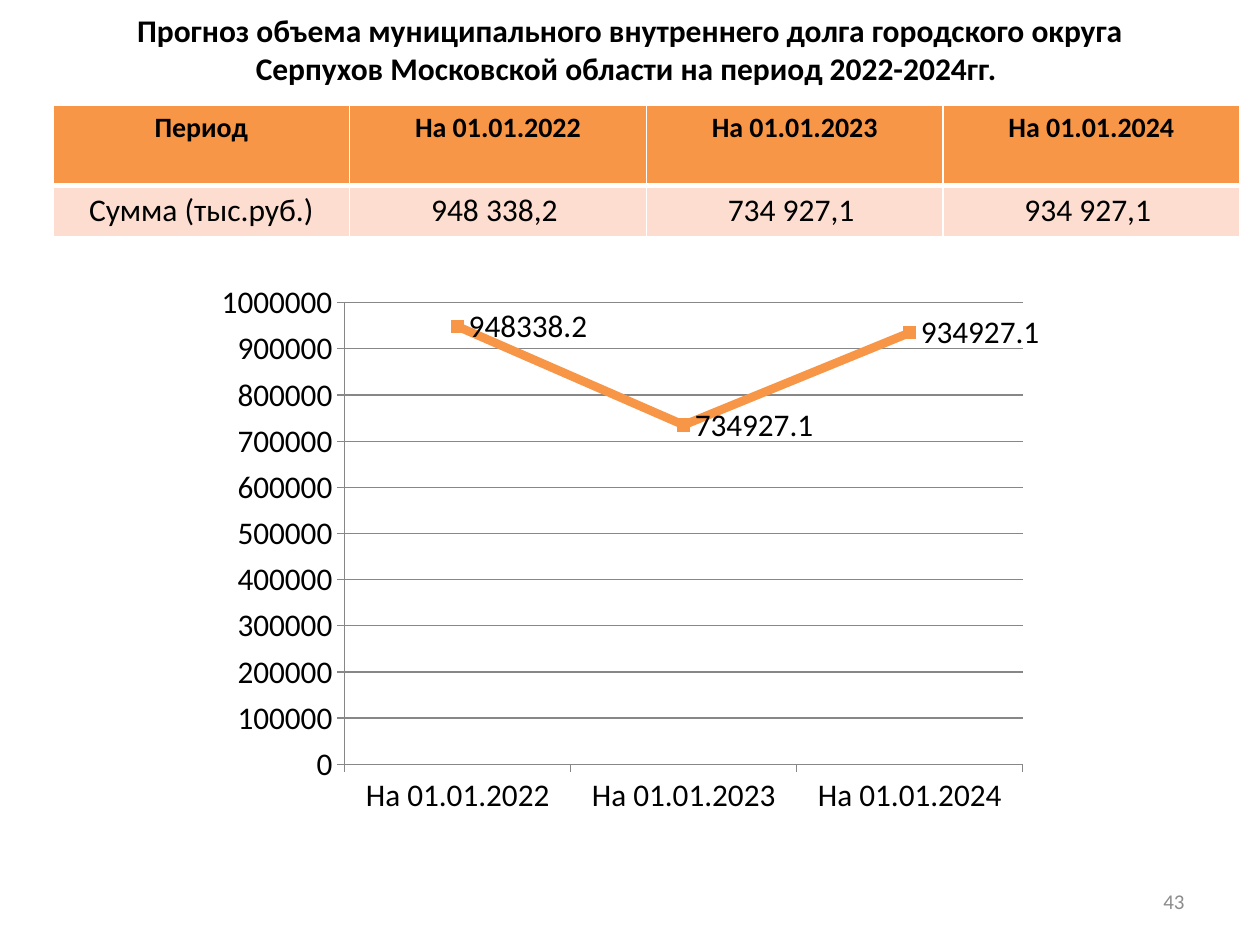
from lxml.etree import SubElement
from pptx import Presentation
from pptx.chart.data import CategoryChartData
from pptx.dml.color import RGBColor
from pptx.enum.chart import XL_CHART_TYPE as ChartType, XL_LABEL_POSITION as LabelPosition
from pptx.enum.chart import XL_MARKER_STYLE as MarkerStyle, XL_TICK_MARK as TickMark
from pptx.enum.text import MSO_ANCHOR as Anchor, MSO_AUTO_SIZE as AutoSize, PP_ALIGN as Align
from pptx.oxml import parse_xml
from pptx.oxml.ns import nsdecls, qn
from pptx.util import Inches, Pt

WIDTH, HEIGHT = Inches(10), Inches(7.5)
FONT = "Calibri"
COLORS = {
    "text": "000000",
    "number": "8C8C8C",
    "accent": "F79646",
    "pale": "FCDDCF",
    "border": "FFFFFF",
    "axis": "878787",
}
DATES = ["На 01.01.2022", "На 01.01.2023", "На 01.01.2024"]
DEBT = [948338.2, 734927.1, 934927.1]


def color(name):
    return RGBColor.from_string(COLORS[name])


def share(left, top, width, height):
    return int(WIDTH * left), int(HEIGHT * top), int(WIDTH * width), int(HEIGHT * height)


def style_font(font, size, name="text", bold=False):
    font.name, font.size, font.bold = FONT, Pt(size), bold
    font.color.rgb = color(name)


def write(frame, text, size, align, name="text", bold=False):
    para = frame.paragraphs[0]
    para.alignment = align
    span = para.add_run()
    span.text = text
    style_font(span.font, size, name, bold)


def add_title(page, text):
    title = page.shapes.title
    title.left, title.top, title.width, title.height = share(0.05, 0.01, 0.9, 0.083)
    frame = title.text_frame
    frame.auto_size = AutoSize.NONE
    frame.vertical_anchor = Anchor.MIDDLE
    write(frame, text, 18, Align.CENTER, bold=True)


def add_page_number(page, text):
    box = page.shapes.add_textbox(*share(0.717, 0.927, 0.233, 0.053))
    frame = box.text_frame
    frame.word_wrap = True
    frame.vertical_anchor = Anchor.MIDDLE
    write(frame, text, 12, Align.RIGHT, "number")


def set_borders(cell, widths):
    properties = cell._tc.get_or_add_tcPr()
    for side, width in widths.items():
        line = SubElement(properties, qn(f"a:ln{side}"), w=str(Pt(width)))
        fill = SubElement(line, qn("a:solidFill"))
        SubElement(fill, qn("a:srgbClr"), val=COLORS["border"])


def add_debt_table(page):
    amounts = [f"{value:,.1f} ".replace(",", "\u00a0").replace(".", ",") for value in DEBT]
    rows = [["Период", *DATES], ["Сумма (тыс.руб.)", *amounts]]
    styles = [("accent", 16, True, {"L": 1, "R": 1, "T": 1, "B": 3}),
              ("pale", 18, False, {"L": 1, "R": 1, "T": 3, "B": 1})]
    area = share(0.042, 0.111, 0.942, 0.139)
    table = page.shapes.add_table(len(rows), len(rows[0]), *area).table
    for row, height in zip(table.rows, (0.64, 0.4)):
        row.height = Inches(height)
    for row, texts, (fill, size, bold, borders) in zip(table.rows, rows, styles):
        for cell, text in zip(row.cells, texts):
            set_borders(cell, borders)
            cell.fill.solid()
            cell.fill.fore_color.rgb = color(fill)
            write(cell.text_frame, text, size, Align.CENTER, bold=bold)


def set_plot_area(chart, **places):
    plot_area = chart._chartSpace.chart.plotArea
    for old in plot_area.findall(qn("c:layout")):
        plot_area.remove(old)
    values = "".join(f'<c:{key} val="{value}"/>' for key, value in places.items())
    plot_area.insert(0, parse_xml(
        f'<c:layout {nsdecls("c")}><c:manualLayout><c:layoutTarget val="inner"/>'
        f'<c:xMode val="edge"/><c:yMode val="edge"/>{values}</c:manualLayout></c:layout>'))


def style_axis(axis, grid):
    axis.major_tick_mark, axis.minor_tick_mark = TickMark.OUTSIDE, TickMark.NONE
    axis.has_major_gridlines = grid
    lines = [axis.format.line]
    if grid:
        lines.append(axis.major_gridlines.format.line)
    for line in lines:
        line.color.rgb = color("axis")
        line.width = Pt(0.75)


def add_debt_chart(page):
    data = CategoryChartData(number_format="General")
    data.categories = DATES
    data.add_series("Series 1", DEBT)
    area = share(0.158, 0.289, 0.667, 0.592)
    chart = page.shapes.add_chart(ChartType.LINE_MARKERS, *area, data).chart
    chart.has_legend = chart.has_title = False
    style_font(chart.font, 18)
    set_plot_area(chart, x=0.175, y=0.053, w=0.815, h=0.825)
    style_axis(chart.category_axis, False)
    style_axis(chart.value_axis, True)
    chart.value_axis.minimum_scale, chart.value_axis.maximum_scale = 0, 1000000
    chart.value_axis.major_unit = 100000

    plot = chart.plots[0]
    plot.vary_by_categories = False
    series = plot.series[0]
    series.smooth = False
    series.format.line.color.rgb = color("accent")
    series.format.line.width = Pt(5)
    marker = series.marker
    marker.style, marker.size = MarkerStyle.SQUARE, 7
    marker.format.fill.solid()
    marker.format.fill.fore_color.rgb = color("accent")
    marker.format.line.color.rgb = color("accent")
    labels = series.data_labels
    labels.show_value = True
    labels.position = LabelPosition.RIGHT
    style_font(labels.font, 18)


def main():
    deck = Presentation()
    deck.slide_width, deck.slide_height = WIDTH, HEIGHT
    page = deck.slides.add_slide(deck.slide_layouts.get_by_name("Title Only"))
    add_title(page, "Прогноз объема муниципального внутреннего долга городского округа "
                    "Серпухов Московской области на период 2022-2024гг. ")
    add_debt_table(page)
    add_page_number(page, "43")
    add_debt_chart(page)
    deck.save("out.pptx")


if __name__ == "__main__":
    main()
